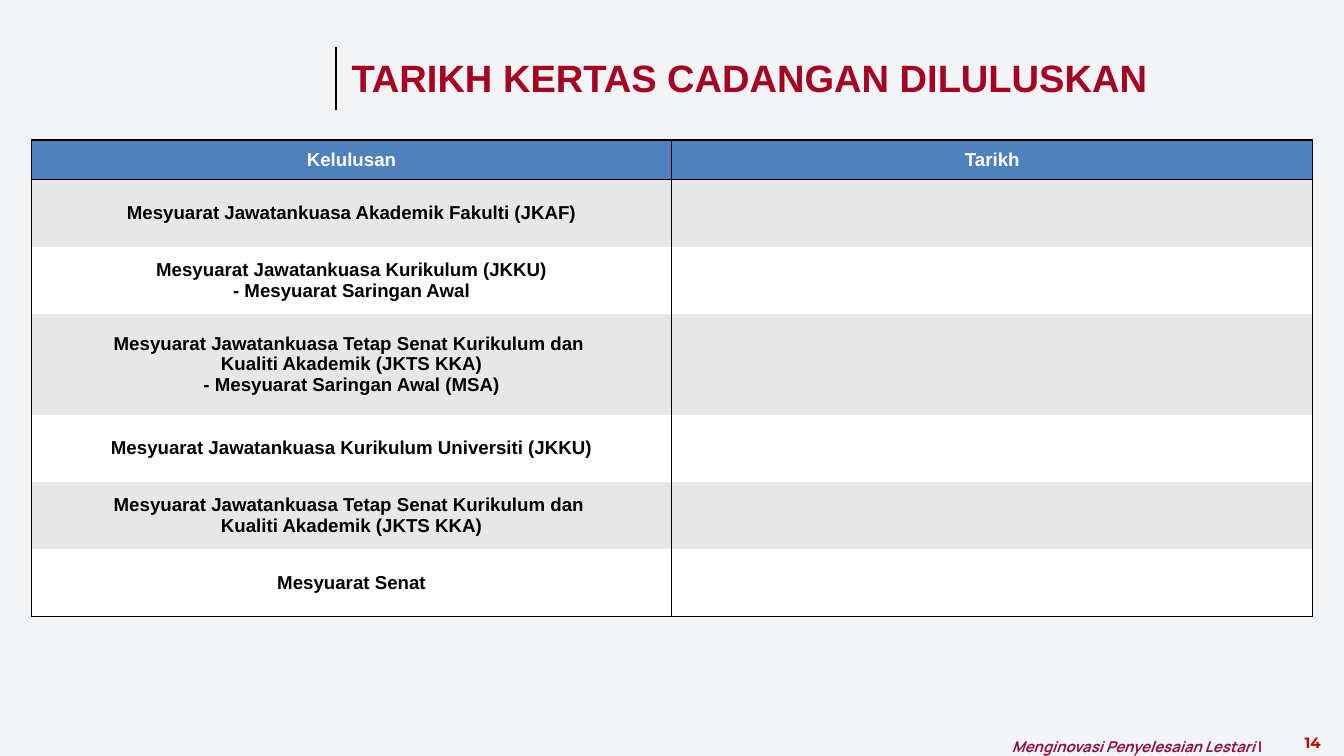
from dataclasses import dataclass

from lxml import etree
from pptx import Presentation
from pptx.dml.color import RGBColor as RGB
from pptx.enum.shapes import MSO_CONNECTOR as CONNECTOR
from pptx.enum.text import MSO_ANCHOR as ANCHOR, PP_ALIGN as ALIGN
from pptx.oxml.ns import qn
from pptx.util import Pt


@dataclass(frozen=True)
class Theme:
    background: str = "F2F4F5"
    title: str = "A50021"
    slogan: str = "901042"
    number: str = "C00000"
    line: str = "000000"
    header: str = "4F81BD"
    bands: tuple = ("E7E7E7", "FFFFFF")
    header_text: str = "FFFFFF"
    body_text: str = "000000"
    title_size: float = 40.8
    table_size: float = 20
    footer_size: float = 16


THEME = Theme()
NO_GRID_STYLE = "{2D5ABB26-0587-4C30-8999-92F81FD0307C}"
ROWS = [
    ("Kelulusan", 42.5),
    ("Mesyuarat Jawatankuasa Akademik Fakulti (JKAF)", 72),
    ("Mesyuarat Jawatankuasa Kurikulum (JKKU)\n- Mesyuarat Saringan Awal", 72),
    ("Mesyuarat Jawatankuasa Tetap Senat Kurikulum dan \n"
     "Kualiti Akademik (JKTS KKA)\n- Mesyuarat Saringan Awal (MSA)", 108),
    ("Mesyuarat Jawatankuasa Kurikulum Universiti (JKKU)", 72),
    ("Mesyuarat Jawatankuasa Tetap Senat Kurikulum dan \n"
     "Kualiti Akademik (JKTS KKA)", 72),
    ("Mesyuarat Senat", 72),
]


def write(tf, text, *, size, color, font="Arial", align=ALIGN.LEFT,
          spacing=None, italic=False):
    """Fill the first paragraph with bold text; newlines become line breaks."""
    p = tf.paragraphs[0]
    p.text = text
    p.alignment = align
    p.line_spacing = spacing
    for r in p.runs:
        r.font.name, r.font.size = font, Pt(size)
        r.font.bold, r.font.italic = True, italic
        r.font.color.rgb = RGB.from_string(color)
    return p


def set_borders(cell, **widths):
    """Draw solid borders; sides are given in the order L, R, T, B."""
    tcPr = cell._tc.get_or_add_tcPr()
    for side, width in widths.items():
        ln = etree.SubElement(tcPr, qn(f"a:ln{side}"), w=str(Pt(width)))
        fill = etree.SubElement(ln, qn("a:solidFill"))
        etree.SubElement(fill, qn("a:srgbClr"), val=THEME.line)


prs = Presentation()
prs.slide_width, prs.slide_height = Pt(1440), Pt(810)
s = prs.slides.add_slide(prs.slide_layouts[5])
s.background.fill.solid()
s.background.fill.fore_color.rgb = RGB.from_string(THEME.background)

# Title and the rule beside it
title = s.shapes.title
title.left, title.top, title.width, title.height = Pt(369.5), Pt(57.5), Pt(920), Pt(57)
title.text_frame.vertical_anchor = ANCHOR.MIDDLE
write(title.text_frame, "TARIKH KERTAS CADANGAN DILULUSKAN", size=THEME.title_size,
      color=THEME.title, spacing=0.9)

rule = s.shapes.add_connector(CONNECTOR.STRAIGHT, Pt(360), Pt(118), Pt(360), Pt(50.5))
rule.line.width = Pt(3)
rule.line.color.rgb = RGB.from_string(THEME.line)
etree.SubElement(rule._element.spPr, qn("a:effectLst"))

# Approval table
frame = s.shapes.add_table(len(ROWS), 2, Pt(33.4), Pt(150), Pt(1373),
                           Pt(sum(height for _, height in ROWS)))
table = frame.table
frame._element.find(".//" + qn("a:tableStyleId")).text = NO_GRID_STYLE
for i, (approval, height) in enumerate(ROWS):
    is_header = i == 0
    table.rows[i].height = Pt(height)
    fill = THEME.header if is_header else THEME.bands[(i - 1) % 2]
    edges = {"L": 1, "R": 1}
    if is_header:
        edges["T"] = 2
    if is_header or i == len(ROWS) - 1:
        edges["B"] = 2
    for cell, text in zip(table.rows[i].cells, (approval, "Tarikh" if is_header else "")):
        set_borders(cell, **edges)
        cell.fill.solid()
        cell.fill.fore_color.rgb = RGB.from_string(fill)
        cell.vertical_anchor = ANCHOR.MIDDLE
        if text:
            write(cell.text_frame, text, size=THEME.table_size, align=ALIGN.CENTER,
                  color=THEME.header_text if is_header else THEME.body_text)

# Footer
slogan = s.shapes.add_textbox(Pt(1084.3), Pt(782.6), Pt(302.4), Pt(27.4)).text_frame
slogan.word_wrap = True
slogan.margin_left = slogan.margin_right = slogan.margin_top = slogan.margin_bottom = 0
p = write(slogan, "Menginovasi Penyelesaian Lestari ", size=THEME.footer_size,
          color=THEME.slogan, font="Manrope", spacing=1.4, italic=True)
r = p.add_run()
r.text = "|"
r.font.name, r.font.size, r.font.bold = "Manrope", Pt(THEME.footer_size), True
r.font.color.rgb = RGB.from_string(THEME.slogan)

number = s.shapes.add_textbox(Pt(1373), Pt(782.6), Pt(67), Pt(26.6)).text_frame
number.word_wrap = True
write(number, "14", size=THEME.footer_size, color=THEME.number, font="Montserrat",
      align=ALIGN.CENTER)

prs.save("out.pptx")
